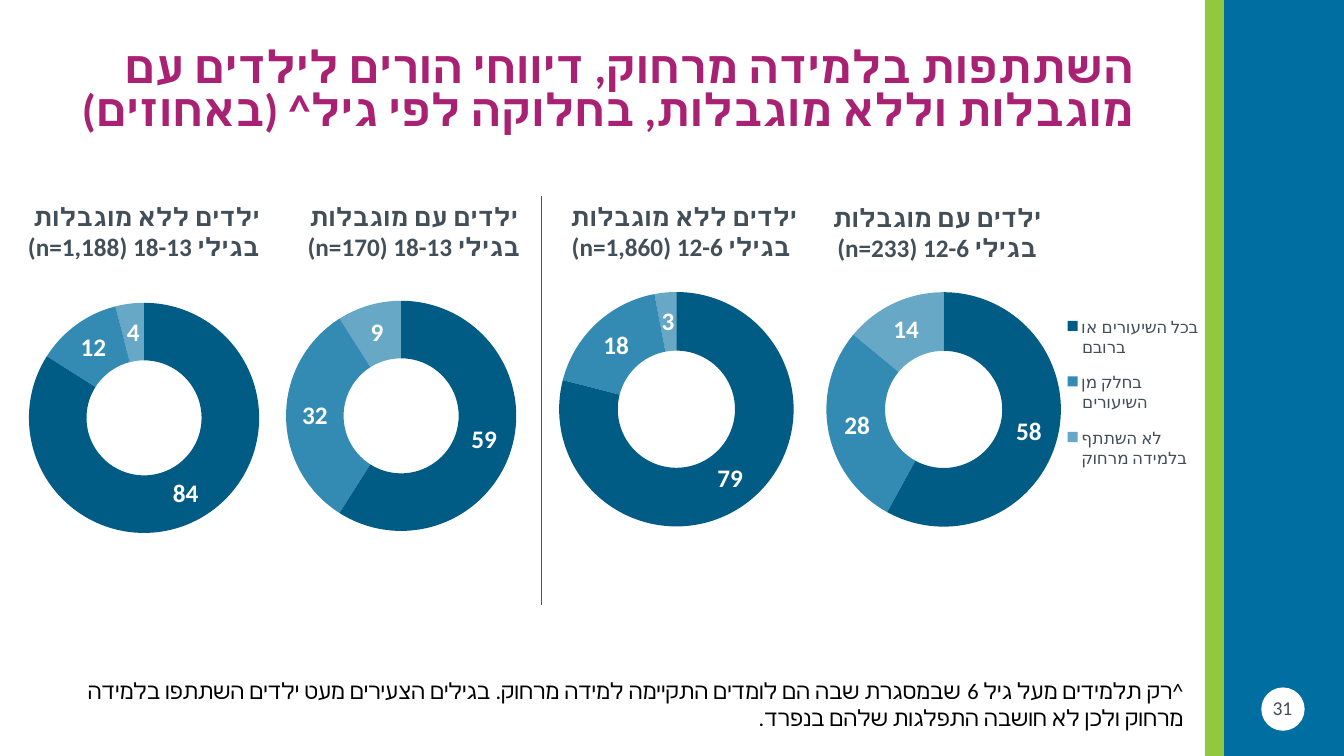
from lxml import etree
from pptx import Presentation
from pptx.chart.data import CategoryChartData
from pptx.dml.color import RGBColor
from pptx.enum.chart import XL_CHART_TYPE, XL_LEGEND_POSITION
from pptx.enum.shapes import MSO_CONNECTOR, MSO_SHAPE
from pptx.enum.text import MSO_ANCHOR, PP_ALIGN
from pptx.oxml.ns import qn
from pptx.util import Inches, Pt

DONUT = XL_CHART_TYPE.DOUGHNUT
EAST = XL_LEGEND_POSITION.RIGHT
LINE = MSO_CONNECTOR.STRAIGHT
RECT, OVAL = MSO_SHAPE.RECTANGLE, MSO_SHAPE.OVAL
TOP, MIDDLE = MSO_ANCHOR.TOP, MSO_ANCHOR.MIDDLE
CENTER, RIGHT = PP_ALIGN.CENTER, PP_ALIGN.RIGHT

FONT = "Calibri"
WHITE, BLACK, GRAY = "FFFFFF", "000000", "424F58"
BLUE, NAVY, GREEN, PLUM = "006EA0", "005B85", "92C83E", "A82172"
SLICES = [(NAVY, 100), (BLUE, 80), (BLUE, 60)]
PLAIN = ["1", "2", "3"]
ANSWERS = ["בכל השיעורים או ברובם", "בחלק מן השיעורים", "לא השתתף בלמידה מרחוק"]
PLOT = (0.216, 0.057, 0.548, 0.707)
KEYED = (0.179, 0.091, 0.548, 0.707)
KEY = (0.69, 0.12, 0.26, 0.55)

GROUPS = [
    ("ללא", "18-13", "(n=1,188)", -0.37, 1.95, (-1.08, 2.82, 5.12, 3.23), [84, 12, 4], False),
    ("עם", "18-13", "(n=170) ", 2.28, 1.95, (1.47, 2.8, 5.12, 3.23), [59, 32, 9], False),
    ("ללא", "12-6", "(n=1,860)", 4.96, 1.95, (4.2, 2.71, 5.12, 3.29), [79, 18, 3], False),
    ("עם", "12-6", "(n=233) ", 7.47, 1.96, (7.04, 2.6, 5.12, 3.29), [58, 28, 14], True),
]


def color(text):
    return RGBColor.from_string(text)


def place(parent, spot, box, inner=False):
    for old in parent.findall(qn("c:layout")):
        parent.remove(old)
    layout = etree.Element(qn("c:layout"))
    manual = etree.SubElement(layout, qn("c:manualLayout"))
    parts = [("layoutTarget", "inner")] if inner else []
    parts += [("xMode", "edge"), ("yMode", "edge")]
    parts += zip("xywh", box)
    for name, value in parts:
        etree.SubElement(manual, qn("c:" + name)).set("val", str(value))
    parent.insert(spot, layout)


class Page:
    def __init__(self, slide):
        self.slide = slide

    def style(self, font, size, tone, bold=False):
        font.name, font.size, font.bold = FONT, Pt(size), bold
        font.color.rgb = color(tone)
        etree.SubElement(font._element, qn("a:cs")).set("typeface", FONT)

    def shape(self, kind, box, fill):
        item = self.slide.shapes.add_shape(kind, *map(Inches, box))
        item.shadow.inherit = False
        item.fill.solid()
        item.fill.fore_color.rgb = color(fill)
        item.line.fill.background()

    def text(self, box, lines, size, tone, align, bold=False, anchor=TOP, gap=None):
        frame = self.slide.shapes.add_textbox(*map(Inches, box)).text_frame
        frame.word_wrap = True
        frame.vertical_anchor = anchor
        for index, line in enumerate(lines):
            para = frame.add_paragraph() if index else frame.paragraphs[0]
            para.alignment = align
            para.line_spacing = gap
            para._p.get_or_add_pPr().set("rtl", "1")
            run = para.add_run()
            run.text = line
            self.style(run.font, size, tone, bold)

    def rule(self, start, end, tone, width):
        line = self.slide.shapes.add_connector(LINE, *map(Inches, start + end))
        line.line.color.rgb = color(tone)
        line.line.width = Pt(width)
        etree.SubElement(line._element.spPr, qn("a:effectLst"))

    def donut(self, box, values, keyed):
        data = CategoryChartData()
        data.categories = ANSWERS if keyed else PLAIN
        data.add_series("Series 1", values)
        chart = self.slide.shapes.add_chart(DONUT, *map(Inches, box), data).chart
        self.style(chart.font, 10, GRAY)
        chart.has_title = False
        chart.has_legend = keyed
        if keyed:
            legend = chart.legend
            legend.position = EAST
            legend.include_in_layout = False
            self.style(legend.font, 12, GRAY)
            place(legend._element, 1, KEY)
        area = chart._chartSpace.chart.plotArea
        place(area, 0, KEYED if keyed else PLOT, True)
        plot = chart.plots[0]
        plot.vary_by_categories = True
        for index, (tone, alpha) in enumerate(SLICES):
            form = plot.series[0].points[index].format
            form.line.fill.background()
            form.fill.solid()
            form.fill.fore_color.rgb = color(tone)
            if alpha < 100:
                for node in form.fill._xPr.iter(qn("a:srgbClr")):
                    etree.SubElement(node, qn("a:alpha")).set("val", str(alpha * 1000))
        labels = plot.series[0].data_labels
        labels.show_value = True
        self.style(labels.font, 18, WHITE, True)


def main():
    deck = Presentation()
    deck.slide_width, deck.slide_height = Inches(13.33), Inches(7.5)
    page = Page(deck.slides.add_slide(deck.slide_layouts[6]))

    page.shape(RECT, (11.95, 0, 0.2, 7.5), GREEN)
    page.shape(RECT, (12.14, 0, 1.19, 7.5), BLUE)
    page.shape(OVAL, (12.51, 6.82, 0.43, 0.43), WHITE)
    page.text((12.43, 6.86, 0.58, 0.4), ["31"], 14, GRAY, CENTER)

    title = "השתתפות בלמידה מרחוק, דיווחי הורים לילדים עם מוגבלות וללא מוגבלות, בחלוקה לפי גיל^ (באחוזים)"
    page.text((0, 0.19, 11.35, 1.45), [title], 32, PLUM, RIGHT, True, MIDDLE, 0.8)

    for kind, ages, count, left, top, box, values, keyed in GROUPS:
        page.donut(box, values, keyed)
        lines = [f"ילדים {kind} מוגבלות ", f"בגילי {ages} {count}"]
        page.text((left, top, 3.59, 0.71), lines, 18, GRAY, CENTER, True)

    page.rule((5.37, 1.94), (5.37, 6), BLUE, 0.5)
    note = (
        "^רק תלמידים מעל גיל 6 שבמסגרת שבה הם לומדים התקיימה למידה מרחוק. "
        "בגילים הצעירים מעט ילדים השתתפו בלמידה מרחוק ולכן לא חושבה התפלגות שלהם בנפרד."
    )
    page.text((0.43, 6.67, 11.41, 0.64), [note], 16, BLACK, RIGHT)
    deck.save("out.pptx")


if __name__ == "__main__":
    main()
